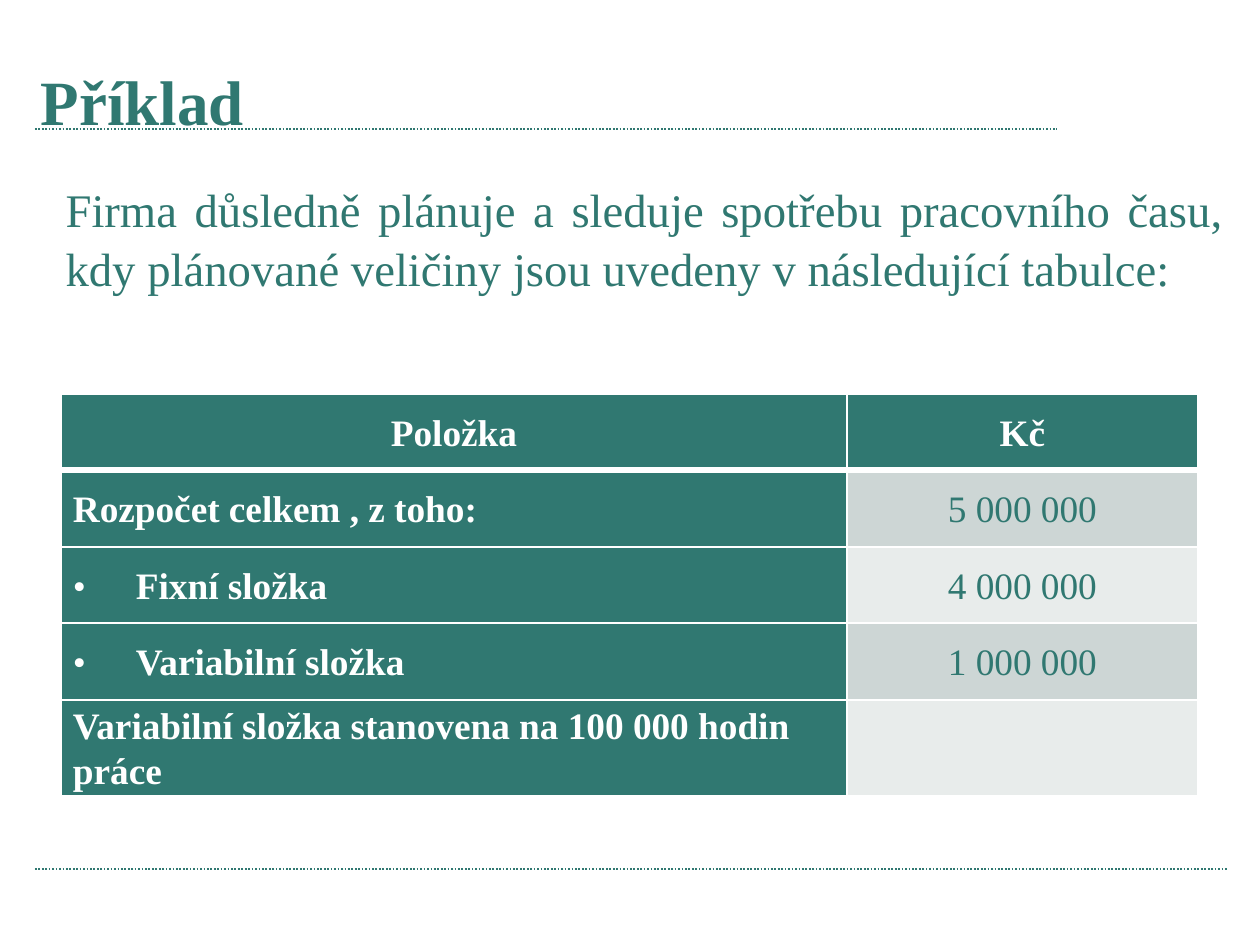
from dataclasses import dataclass

from lxml.etree import SubElement
from pptx import Presentation
from pptx.dml.color import RGBColor
from pptx.enum.dml import MSO_LINE
from pptx.enum.shapes import MSO_CONNECTOR
from pptx.enum.text import MSO_ANCHOR, MSO_AUTO_SIZE, PP_ALIGN
from pptx.oxml.ns import qn
from pptx.util import Emu, Pt

EMU_PER_PX = 914400 / 168


@dataclass(frozen=True)
class Theme:
    font: str = "Times New Roman"
    teal: str = "307871"
    white: str = "FFFFFF"
    bands: tuple = ("CDD6D5", "E8ECEB")
    title_size: int = 27
    body_size: int = 20
    table_size: int = 16
    rule_width: float = 0.75
    grid_width: int = 1
    header_width: int = 3


def px(length):
    return Emu(round(length * EMU_PER_PX))


def apply(target, **values):
    for name, value in values.items():
        setattr(target, name, value)


class SlideBuilder:
    def __init__(self, slide, theme):
        self.slide = slide
        self.theme = theme

    def style(self, paragraph, size, color, bold=False, **paragraph_format):
        apply(paragraph, **paragraph_format)
        apply(paragraph.font, name=self.theme.font, size=Pt(size), bold=bold)
        paragraph.font.color.rgb = RGBColor.from_string(color)

    def title(self, text, left, top, width, height):
        heading = self.slide.shapes.title
        apply(heading, left=px(left), top=px(top), width=px(width), height=px(height))
        frame = heading.text_frame
        apply(frame, text=text, auto_size=MSO_AUTO_SIZE.NONE,
              vertical_anchor=MSO_ANCHOR.MIDDLE)
        self.style(frame.paragraphs[0], self.theme.title_size, self.theme.teal,
                   bold=True, alignment=PP_ALIGN.LEFT)

    def body(self, text, left, top, width, height):
        intro = self.slide.shapes.add_textbox(px(left), px(top), px(width), px(height))
        apply(intro.text_frame, text=text, word_wrap=True)
        self.style(intro.text_frame.paragraphs[0], self.theme.body_size, self.theme.teal,
                   alignment=PP_ALIGN.JUSTIFY, line_spacing=1.05)

    def rule(self, left, right, y):
        """Draw a dotted horizontal line."""
        rule = self.slide.shapes.add_connector(
            MSO_CONNECTOR.STRAIGHT, px(left), px(y), px(right), px(y))
        apply(rule.line, width=Pt(self.theme.rule_width), dash_style=MSO_LINE.ROUND_DOT)
        rule.line.color.rgb = RGBColor.from_string(self.theme.teal)
        SubElement(rule._element.spPr, qn("a:effectLst"))

    def borders(self, cell, row):
        """Outline a cell in white, with a heavier edge under the header row."""
        heavy_edge = {0: "lnB", 1: "lnT"}.get(row)
        for edge in ("lnL", "lnR", "lnT", "lnB"):
            points = self.theme.header_width if edge == heavy_edge else self.theme.grid_width
            line = SubElement(cell._tc.get_or_add_tcPr(), qn(f"a:{edge}"), w=str(Pt(points)))
            fill = SubElement(line, qn("a:solidFill"))
            SubElement(fill, qn("a:srgbClr"), val=self.theme.white)

    def bullet(self, paragraph, indent):
        properties = paragraph._p.get_or_add_pPr()
        properties.set("marL", str(px(indent)))
        properties.set("indent", str(-px(indent)))
        SubElement(properties, qn("a:buFont"), typeface=self.theme.font)
        SubElement(properties, qn("a:buChar"), char="•")

    def cell(self, cell, text, row, column, bulleted):
        is_heading = row == 0 or column == 0
        fill = self.theme.teal if is_heading else self.theme.bands[(row - 1) % 2]
        apply(cell, text=text, vertical_anchor=MSO_ANCHOR.MIDDLE, margin_left=px(12),
              margin_right=px(12), margin_top=0, margin_bottom=0)
        self.borders(cell, row)
        cell.fill.solid()
        cell.fill.fore_color.rgb = RGBColor.from_string(fill)
        paragraph = cell.text_frame.paragraphs[0]
        paragraph.line_spacing = 1.07
        if bulleted:
            self.bullet(paragraph, 63)
        is_item = row > 0 and column == 0
        self.style(paragraph, self.theme.table_size,
                   self.theme.white if is_heading else self.theme.teal, bold=is_heading,
                   alignment=PP_ALIGN.LEFT if is_item else PP_ALIGN.CENTER)

    def table(self, rows, bulleted_rows, left, top, widths, heights):
        budget = self.slide.shapes.add_table(
            len(rows), len(widths), px(left), px(top), px(sum(widths)), px(sum(heights))).table
        budget.horz_banding = False
        for column, width in zip(budget.columns, widths):
            column.width = px(width)
        for row, height in zip(budget.rows, heights):
            row.height = px(height)
        for r, texts in enumerate(rows):
            for c, text in enumerate(texts):
                self.cell(budget.cell(r, c), text, r, c, c == 0 and r in bulleted_rows)


def main():
    deck = Presentation()
    apply(deck, slide_width=px(1260), slide_height=px(945))
    title_only = deck.slide_layouts[5]
    builder = SlideBuilder(deck.slides.add_slide(title_only), Theme())

    builder.rule(35, 1057, 129)
    builder.rule(35, 1228, 869)
    builder.title("Příklad", 24, 51, 1110, 99)
    builder.body("Firma důsledně plánuje a sleduje spotřebu pracovního času, "
                 "kdy plánované veličiny jsou uvedeny v následující tabulce:",
                 49, 170, 1191, 129)
    budget_rows = [
        ("Položka", "Kč"),
        ("Rozpočet celkem , z toho:", "5 000 000"),
        ("Fixní složka", "4 000 000"),
        ("Variabilní složka", "1 000 000"),
        ("Variabilní složka stanovena na 100 000 hodin práce", ""),
    ]
    builder.table(budget_rows, bulleted_rows=(2, 3), left=61, top=394,
                  widths=(786, 351), heights=(76, 77, 76, 77, 95))
    deck.save("out.pptx")


if __name__ == "__main__":
    main()
